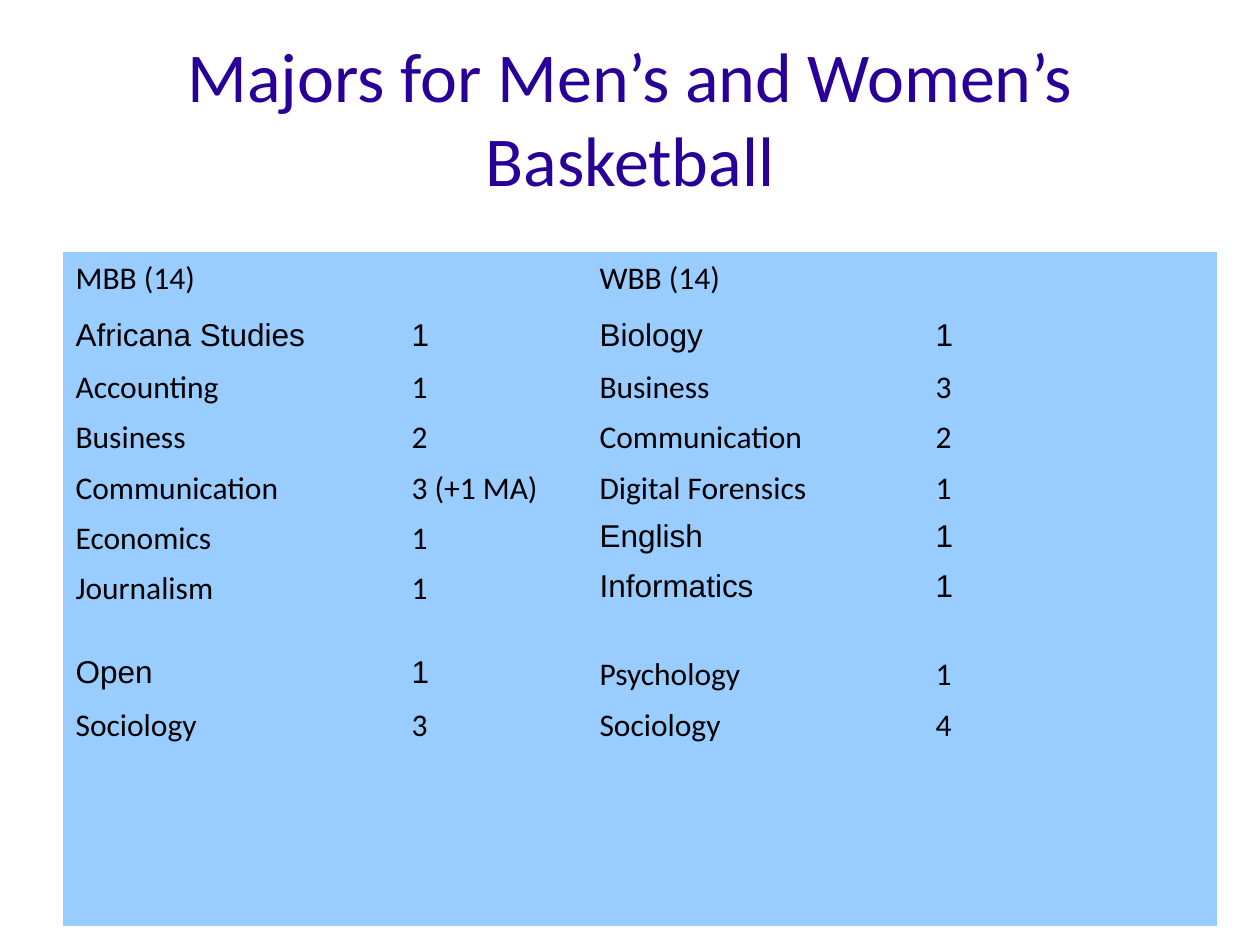
"""Build a slide tabulating the majors of men's and women's basketball players."""
from pptx import Presentation
from pptx import util as u
from pptx.dml.color import RGBColor
from pptx.enum import text

PX = 914400 // 126
COLORS = {"title": "280099", "body": "000000", "panel": "99CCFF"}
TITLE = "Majors for Men’s and Women’s Basketball"
TITLE_BOX = (63, 38, 1134, 157)
TABLE_AT = (63, 252)
COLUMNS = (336, 188, 336, 294)
HEADER_H, ROW_H, GAP_ROW_H = 59, 50, 86
ROW_HEIGHTS = [HEADER_H] + [ROW_H] * 5 + [GAP_ROW_H] + [ROW_H] * 2 + [HEADER_H] * 3
NO_STYLE = "{2D5ABB26-0587-4C30-8999-92F81FD0307C}"

MEN = [
    ("MBB (14)", ""), ("Africana Studies", "1"), ("Accounting", "1"),
    ("Business", "2"), ("Communication", "3 (+1 MA)"), ("Economics", "1"),
    ("Journalism", "1"), ("Open", "1"), ("Sociology", "3"),
]
WOMEN = [
    ("WBB (14)", ""), ("Biology", "1"), ("Business", "3"),
    ("Communication", "2"), ("Digital Forensics", "1"), ("English", "1"),
    ("Informatics", "1"), ("Psychology", "1"), ("Sociology", "4"),
]
ARIAL_MAJORS = {"Africana Studies", "Open", "Biology", "English", "Informatics"}


def px(*lengths):
    return [u.Emu(length * PX) for length in lengths]


def style(paragraph, font_name, size, color):
    paragraph.font.name = font_name
    paragraph.font.size = u.Pt(size)
    paragraph.font.color.rgb = RGBColor.from_string(COLORS[color])


def add_title(slide):
    frame = slide.shapes.add_textbox(*px(*TITLE_BOX)).text_frame
    frame.word_wrap = True
    frame.vertical_anchor = text.MSO_ANCHOR.MIDDLE
    frame.margin_left = frame.margin_top = frame.margin_right = frame.margin_bottom = 0
    heading = frame.paragraphs[0]
    heading.text = TITLE
    heading.alignment = text.PP_ALIGN.CENTER
    style(heading, "Calibri", 40, "title")


def fill_cell(cell, words, font_name):
    cell.fill.solid()
    cell.fill.fore_color.rgb = RGBColor.from_string(COLORS["panel"])
    cell.margin_left = cell.margin_right = u.Inches(0.1)
    cell.margin_top, cell.margin_bottom = u.Inches(0.07), u.Inches(0.05)
    if words:
        entry = cell.text_frame.paragraphs[0]
        entry.text = words
        entry.line_spacing = 0.93
        style(entry, font_name, 18, "body")


def add_majors(slide):
    majors = slide.shapes.add_table(
        len(ROW_HEIGHTS), len(COLUMNS),
        *px(*TABLE_AT, sum(COLUMNS), sum(ROW_HEIGHTS))).table
    majors.first_row = majors.horz_banding = False
    majors._tbl.tblPr[0].text = NO_STYLE
    for column, width in zip(majors.columns, px(*COLUMNS)):
        column.width = width
    for row, height in zip(majors.rows, px(*ROW_HEIGHTS)):
        row.height = height
    for r in range(len(ROW_HEIGHTS)):
        for t, team in enumerate((MEN, WOMEN)):
            pair = team[r] if r < len(team) else ("", "")
            font_name = "Arial" if pair[0] in ARIAL_MAJORS else "Calibri"
            for c, words in enumerate(pair):
                fill_cell(majors.cell(r, 2 * t + c), words, font_name)


def main():
    deck = Presentation()
    deck.slide_width, deck.slide_height = px(1260, 945)
    slide = deck.slides.add_slide(deck.slide_layouts[6])
    add_title(slide)
    add_majors(slide)
    deck.save("out.pptx")


if __name__ == "__main__":
    main()
